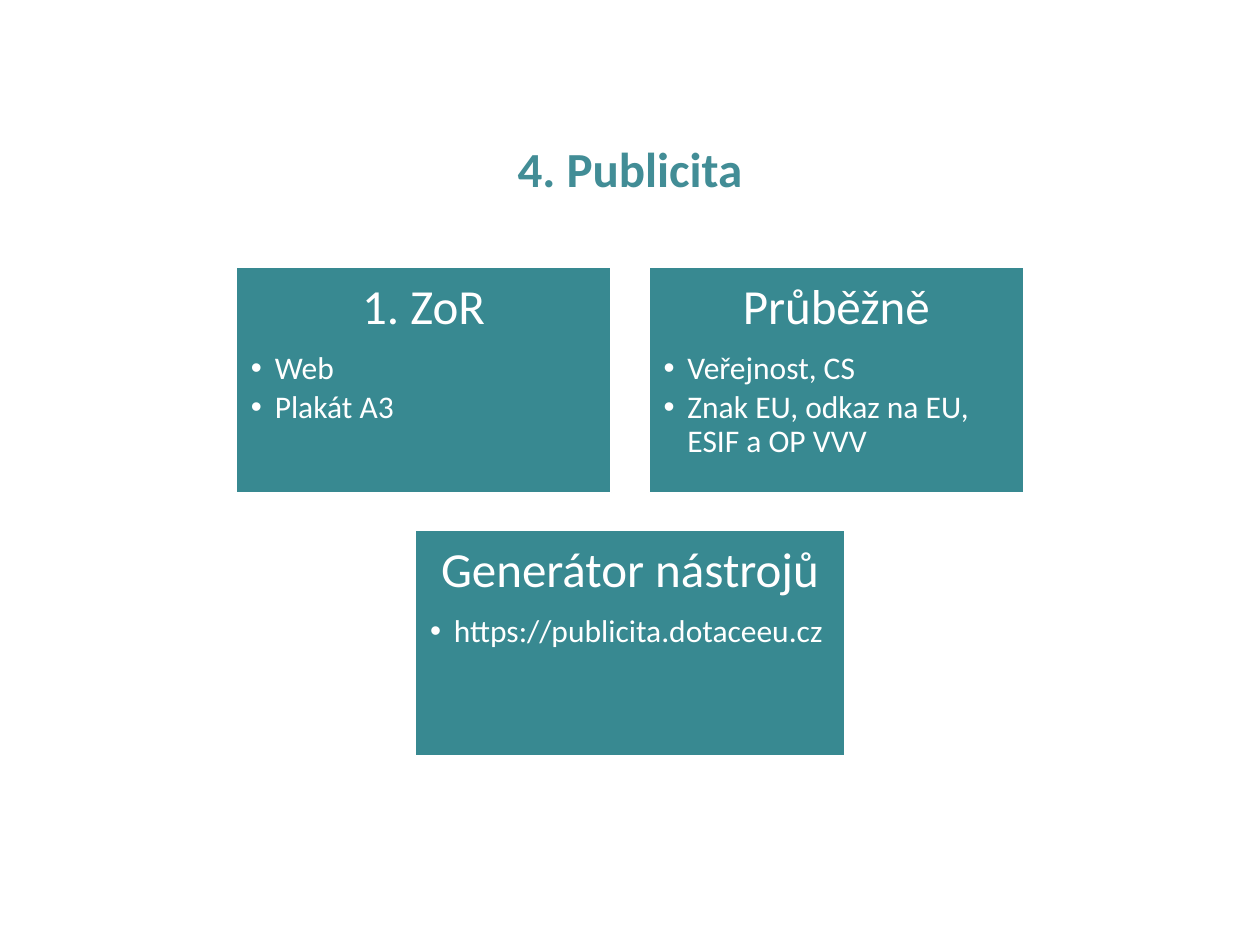
from lxml import etree
from pptx import Presentation
from pptx import util as u
from pptx.dml.color import RGBColor
from pptx.enum import shapes, text
from pptx.oxml.ns import qn

TEAL = RGBColor(0x38, 0x89, 0x91)
TITLE_TEAL = RGBColor(0x42, 0x8D, 0x96)
WHITE = RGBColor(0xFF, 0xFF, 0xFF)
FONT = "Calibri"

SLIDE_WIDTH = 25.4
CARD_HEIGHT = 4.54
GAP = 0.76
TOP = 5.39
INSET = 0.3

# Each row: card width in cm, then the cards (heading, bullets)
ROWS = [
    (7.56, [
        ("1. ZoR", ["Web", "Plakát A3"]),
        ("Průběžně", ["Veřejnost, CS", "Znak EU, odkaz na EU, ESIF a OP VVV"]),
    ]),
    (8.66, [("Generátor nástrojů", ["https://publicita.dotaceeu.cz"])]),
]


def set_font(paragraph, size, color, bold=False):
    for run in paragraph.runs:
        run.font.name = FONT
        run.font.size = u.Pt(size)
        run.font.color.rgb = color
        run.font.bold = bold


def set_bullet(paragraph, indent):
    properties = paragraph._p.get_or_add_pPr()
    properties.set("marL", str(u.Cm(indent)))
    properties.set("indent", str(-u.Cm(indent)))
    font = etree.SubElement(properties, qn("a:buFont"))
    font.set("typeface", "Arial")
    etree.SubElement(properties, qn("a:buChar")).set("char", "•")


def add_title(slide, title):
    shape = slide.shapes.title
    shape.left, shape.top = u.Cm(1.75), u.Cm(2.21)
    shape.width, shape.height = u.Cm(21.9), u.Cm(2.49)
    frame = shape.text_frame
    frame.text = title
    frame.vertical_anchor = text.MSO_ANCHOR.MIDDLE
    paragraph = frame.paragraphs[0]
    paragraph.alignment = text.PP_ALIGN.CENTER
    paragraph.line_spacing = 0.9
    set_font(paragraph, 28, TITLE_TEAL, bold=True)


def add_card(slide, left, top, width, heading, bullets):
    card = slide.shapes.add_shape(
        shapes.MSO_SHAPE.RECTANGLE,
        u.Cm(left), u.Cm(top), u.Cm(width), u.Cm(CARD_HEIGHT))
    card.shadow.inherit = False
    card.fill.solid()
    card.fill.fore_color.rgb = TEAL
    card.line.color.rgb = WHITE
    card.line.width = u.Pt(1)

    frame = card.text_frame
    frame.word_wrap = True
    frame.vertical_anchor = text.MSO_ANCHOR.TOP
    frame.margin_left = frame.margin_right = u.Cm(INSET)
    frame.margin_top = frame.margin_bottom = u.Cm(INSET)

    # Heading
    paragraph = frame.paragraphs[0]
    paragraph.text = heading
    paragraph.alignment = text.PP_ALIGN.CENTER
    paragraph.line_spacing = 0.9
    paragraph.space_after = u.Pt(9.8)
    set_font(paragraph, 28, WHITE)

    # Bullets
    for bullet in bullets:
        paragraph = frame.add_paragraph()
        paragraph.text = bullet
        paragraph.level = 1
        paragraph.alignment = text.PP_ALIGN.LEFT
        paragraph.line_spacing = 0.9
        paragraph.space_after = u.Pt(2.7)
        set_bullet(paragraph, 0.48)
        set_font(paragraph, 18, WHITE)


def main():
    presentation = Presentation()
    presentation.slide_width = u.Cm(SLIDE_WIDTH)
    presentation.slide_height = u.Cm(19.05)
    slide = presentation.slides.add_slide(presentation.slide_layouts[5])
    add_title(slide, "4. Publicita")

    # Rows of cards, each centred on the slide
    for row, (width, cards) in enumerate(ROWS):
        row_width = len(cards) * (width + GAP) - GAP
        start = (SLIDE_WIDTH - row_width) / 2
        top = TOP + row * (CARD_HEIGHT + GAP)
        for column, (heading, bullets) in enumerate(cards):
            left = start + column * (width + GAP)
            add_card(slide, left, top, width, heading, bullets)

    presentation.save("out.pptx")


if __name__ == "__main__":
    main()
